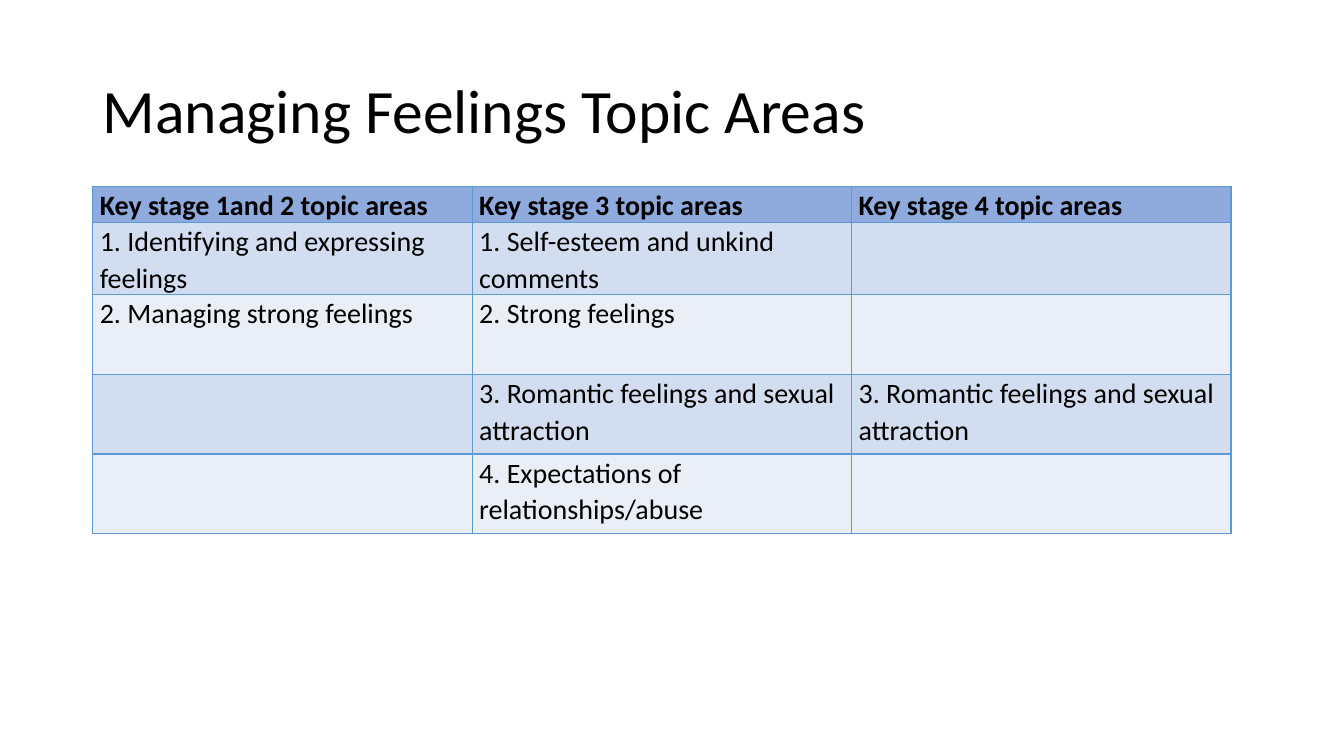
import pptx
import pptx.dml.color
import pptx.enum.text
import pptx.oxml
import pptx.oxml.ns
import pptx.util
from pptx.util import Inches

RGBColor = pptx.dml.color.RGBColor
BLACK = RGBColor(0x00, 0x00, 0x00)
HEADER_BLUE = RGBColor(0x8F, 0xAA, 0xDC)
BAND_DARK = RGBColor(0xD2, 0xDE, 0xEF)
BAND_LIGHT = RGBColor(0xEA, 0xEF, 0xF7)
BORDER_BLUE = RGBColor(0x5B, 0x9B, 0xD5)

TOPIC_ROWS = [
    ["Key stage 1and 2 topic areas", "Key stage 3 topic areas", "Key stage 4 topic areas"],
    ["1. Identifying and expressing feelings", "1. Self-esteem and unkind comments", ""],
    ["2. Managing strong feelings", "2. Strong feelings", ""],
    ["", "3. Romantic feelings and sexual attraction", "3. Romantic feelings and sexual attraction"],
    ["", "4. Expectations of relationships/abuse", ""],
]
ROW_HEIGHTS = [0.36, 0.68, 0.79, 0.79, 0.79]


def write_text(frame, text, size, bold=False, line_spacing=1.0):
    para = frame.paragraphs[0]
    para.line_spacing = line_spacing
    span = para.add_run()
    span.text = text
    span.font.name = "Calibri"
    span.font.size = pptx.util.Pt(size)
    span.font.bold = bold
    span.font.color.rgb = BLACK


def add_title(page, text, left, top, width, height):
    box = page.shapes.add_textbox(Inches(left), Inches(top), Inches(width), Inches(height))
    frame = box.text_frame
    frame.word_wrap = True
    frame.vertical_anchor = pptx.enum.text.MSO_ANCHOR.MIDDLE
    write_text(frame, text, 44, line_spacing=0.9)


def add_borders(cell):
    properties = cell._tc.get_or_add_tcPr()
    for side in ("lnL", "lnR", "lnT", "lnB"):
        properties.append(pptx.oxml.parse_xml(
            f'<a:{side} {pptx.oxml.ns.nsdecls("a")} w="{pptx.util.Pt(1)}">'
            f'<a:solidFill><a:srgbClr val="{BORDER_BLUE}"/></a:solidFill></a:{side}>'))


def row_color(row):
    if row == 0:
        return HEADER_BLUE
    return BAND_DARK if row % 2 else BAND_LIGHT


def add_topic_table(page, rows, left, top, width, height):
    table = page.shapes.add_table(len(rows), len(rows[0]), Inches(left), Inches(top),
                                  Inches(width), Inches(height)).table
    for row, (texts, row_height) in enumerate(zip(rows, ROW_HEIGHTS)):
        table.rows[row].height = Inches(row_height)
        for column, text in enumerate(texts):
            cell = table.cell(row, column)
            add_borders(cell)
            cell.fill.solid()
            cell.fill.fore_color.rgb = row_color(row)
            cell.margin_left = cell.margin_right = Inches(0.07)
            cell.margin_top = cell.margin_bottom = 0
            if text:
                write_text(cell.text_frame, text, 20, bold=row == 0, line_spacing=1.07)


def main():
    deck = pptx.Presentation()
    deck.slide_width, deck.slide_height = Inches(13.33), Inches(7.5)
    page = deck.slides.add_slide(deck.slide_layouts[6])
    add_title(page, "Managing Feelings Topic Areas", 0.92, 0.4, 11.5, 1.45)
    add_topic_table(page, TOPIC_ROWS, 0.92, 1.85, 11.29, sum(ROW_HEIGHTS))
    deck.save("out.pptx")


if __name__ == "__main__":
    main()
